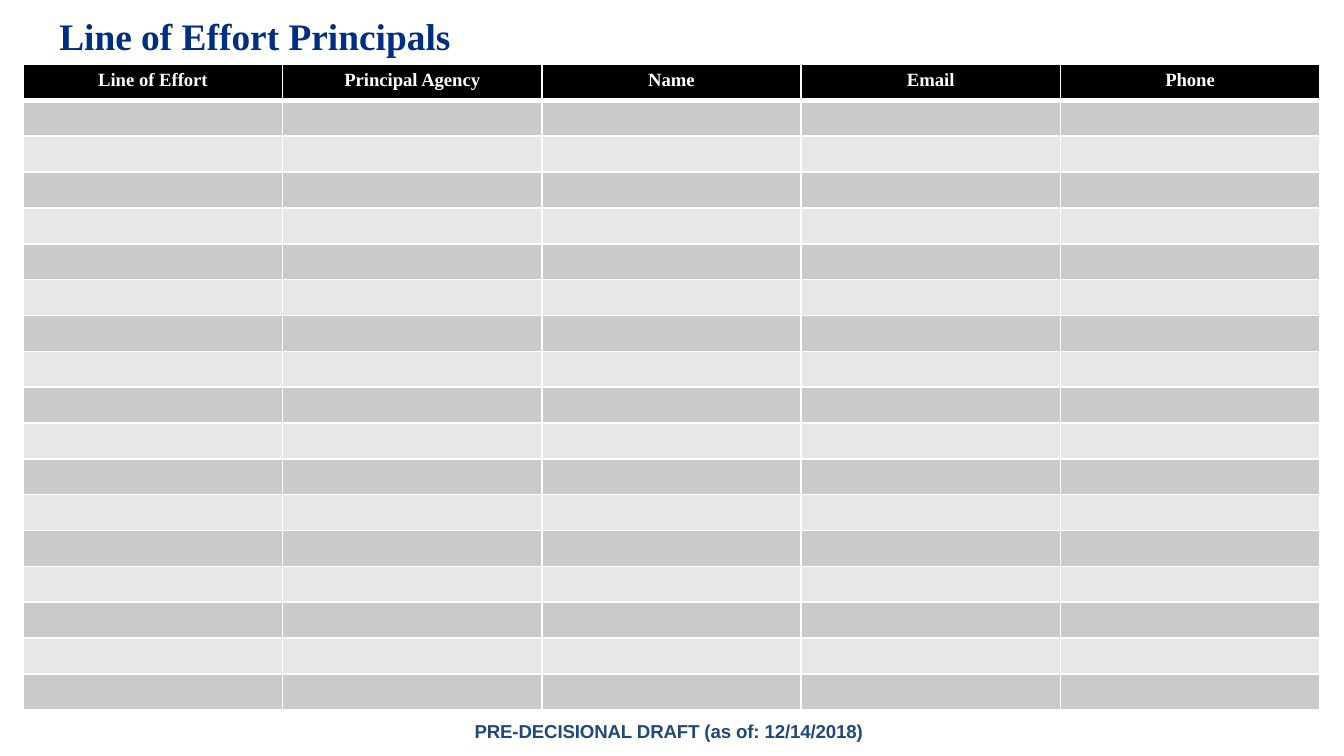
from dataclasses import dataclass

from lxml import etree
from pptx import Presentation
from pptx.dml.color import RGBColor
from pptx.enum import text
from pptx.oxml.ns import qn
from pptx.util import Cm, Pt


@dataclass(frozen=True)
class Theme:
    serif: str = "Times New Roman"
    sans: str = "Arial"
    title: str = "002E80"
    footer: str = "1F487C"
    white: str = "FFFFFF"
    header: str = "000000"
    bands: tuple[str, str] = ("CACACA", "E7E7E7")
    title_size: int = 20
    body_size: int = 10
    line: int = 1
    header_line: int = 3


@dataclass(frozen=True)
class Box:
    left: float
    top: float
    width: float
    height: float

    def lengths(self) -> tuple:
        return Cm(self.left), Cm(self.top), Cm(self.width), Cm(self.height)


THEME = Theme()
TITLE = Box(1.12, 0.18, 7.6, 0.91)
TABLE = Box(0.44, 1.22, 24.5, 12.2)
FOOTER = Box(8.97, 13.6, 7.5, 0.46)
HEADINGS = ("Line of Effort", "Principal Agency", "Name", "Email", "Phone")
EMPTY_ROWS = 17


def write(tf, content: str, *, font: str, size: int, color: str,
          align=text.PP_ALIGN.LEFT, spacing: int = 0) -> None:
    """Write one bold run; spacing is in hundredths of a point."""
    p = tf.paragraphs[0]
    p.alignment = align
    r = p.add_run()
    r.text = content
    r.font.name, r.font.size, r.font.bold = font, Pt(size), True
    r.font.color.rgb = RGBColor.from_string(color)
    if spacing:
        r._r.get_or_add_rPr().set("spc", str(spacing))


def set_frame(tf, top: float = 0) -> None:
    tf.margin_left = tf.margin_right = tf.margin_bottom = 0
    tf.margin_top = Cm(top)
    tf.vertical_anchor = text.MSO_ANCHOR.TOP
    tf.auto_size = text.MSO_AUTO_SIZE.NONE
    tf.word_wrap = False


def add_border(cell, side: str, width: int) -> None:
    ln = etree.SubElement(cell._tc.get_or_add_tcPr(), qn(f"a:ln{side}"), w=str(Pt(width)))
    fill = etree.SubElement(ln, qn("a:solidFill"))
    etree.SubElement(fill, qn("a:srgbClr"), val=THEME.white)


def format_cell(cell, row: int) -> None:
    cell.margin_left = cell.margin_right = cell.margin_bottom = 0
    cell.margin_top = Cm(0.1 if row == 0 else 0)
    thick = {0: "B", 1: "T"}.get(row)
    for side in "LRTB":
        add_border(cell, side, THEME.header_line if side == thick else THEME.line)
    color = THEME.header if row == 0 else THEME.bands[(row - 1) % 2]
    cell.fill.solid()
    cell.fill.fore_color.rgb = RGBColor.from_string(color)


def size_empty_cell(cell) -> None:
    """Keep the default type size from stretching the row."""
    p = cell.text_frame.paragraphs[0]
    etree.SubElement(p._p, qn("a:endParaRPr"), sz=str(THEME.body_size * 100))


def add_principals_table(s, box: Box) -> None:
    table = s.shapes.add_table(EMPTY_ROWS + 1, len(HEADINGS), *box.lengths()).table
    for i, row in enumerate(table.rows):
        for cell, heading in zip(row.cells, HEADINGS):
            format_cell(cell, i)
            if i == 0:
                write(cell.text_frame, heading, font=THEME.serif, size=THEME.body_size,
                      color=THEME.white, align=text.PP_ALIGN.CENTER)
            else:
                size_empty_cell(cell)


def main() -> None:
    prs = Presentation()
    prs.slide_width, prs.slide_height = Cm(25.4), Cm(14.28)
    s = prs.slides.add_slide(prs.slide_layouts[5])

    title = s.shapes.title
    title.left, title.top, title.width, title.height = TITLE.lengths()
    set_frame(title.text_frame, top=0.07)
    write(title.text_frame, "Line of Effort Principals", font=THEME.serif,
          size=THEME.title_size, color=THEME.title)

    footer = s.shapes.add_textbox(*FOOTER.lengths())
    set_frame(footer.text_frame)
    write(footer.text_frame, "PRE-DECISIONAL DRAFT (as of: 12/14/2018)", font=THEME.sans,
          size=THEME.body_size, color=THEME.footer, spacing=-5)

    add_principals_table(s, TABLE)
    prs.save("out.pptx")


if __name__ == "__main__":
    main()
